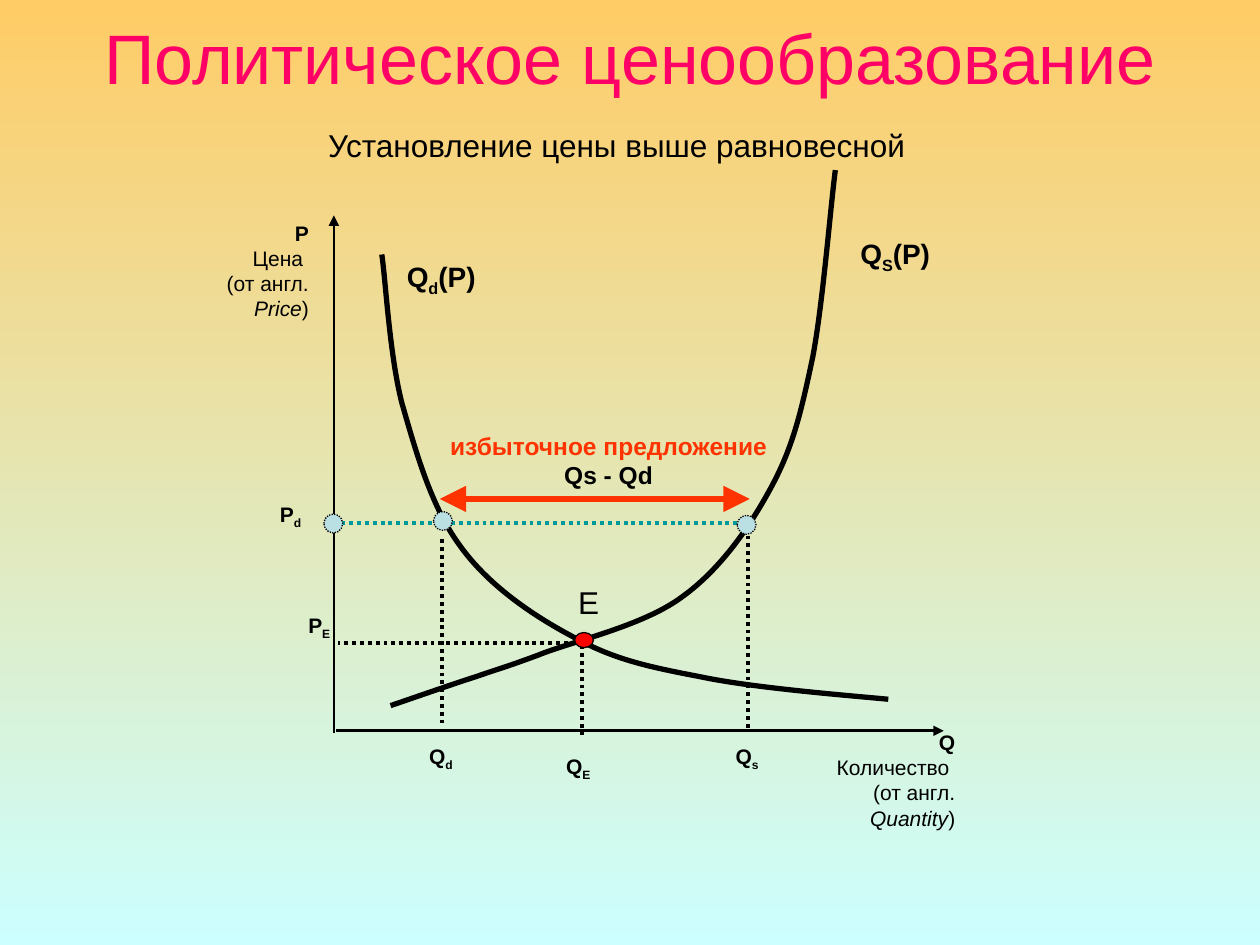
from lxml import etree
from pptx import Presentation
from pptx.dml.color import RGBColor
from pptx.enum.dml import MSO_LINE
from pptx.enum.shapes import MSO_CONNECTOR, MSO_SHAPE
from pptx.enum.text import MSO_ANCHOR, PP_ALIGN
from pptx.oxml.ns import qn
from pptx.util import Inches, Pt

LEFT, CENTER, RIGHT = PP_ALIGN.LEFT, PP_ALIGN.CENTER, PP_ALIGN.RIGHT
TOP, MIDDLE = MSO_ANCHOR.TOP, MSO_ANCHOR.MIDDLE
OVAL = MSO_SHAPE.OVAL
STRAIGHT = MSO_CONNECTOR.STRAIGHT
DOTTED = MSO_LINE.ROUND_DOT  # written to the file as sysDot

FONT = "Arial"
COLORS = {
    "sky": "FFCC66",
    "ground": "CCFFFF",
    "title": "FF0066",
    "ink": "000000",
    "surplus": "FF3300",
    "price_level": "009999",
    "point": "BBE0E3",
    "equilibrium": "FF0000",
}

# Start point, then three points (two controls and an end) for each Bezier segment
DEMAND_CURVE = [
    (2.03, 1.02),
    (2.06, 1.21), (2.09, 1.81), (2.19, 2.2),
    (2.3, 2.58), (2.42, 3.02), (2.65, 3.33),
    (2.87, 3.64), (3.22, 3.88), (3.54, 4.05),
    (3.86, 4.23), (4.13, 4.29), (4.55, 4.37),
    (4.97, 4.46), (5.73, 4.52), (6.05, 4.55),
]
SUPPLY_CURVE = [
    (2.1, 4.6),
    (2.22, 4.56), (2.59, 4.43), (2.78, 4.37),
    (2.98, 4.3), (3, 4.3), (3.27, 4.2),
    (3.54, 4.09), (4.1, 3.97), (4.41, 3.74),
    (4.72, 3.52), (4.96, 3.17), (5.13, 2.85),
    (5.3, 2.53), (5.36, 2.26), (5.45, 1.84),
    (5.53, 1.42), (5.59, 0.66), (5.63, 0.35),
]


def color(name):
    return RGBColor.from_string(COLORS[name])


def style_line(line, color_name, width, dash=None):
    line.color.rgb = color(color_name)
    line.width = Pt(width)
    if dash is not None:
        line.dash_style = dash


def add_text(slide, box, paragraphs, size, align=LEFT, bold=False,
             color_name="ink", anchor=TOP):
    """Each paragraph is a list of (text, style), style being "", "sub", "bold" or "italic"."""
    frame = slide.shapes.add_textbox(*map(Inches, box)).text_frame
    frame.word_wrap = True
    frame.vertical_anchor = anchor
    for index, runs in enumerate(paragraphs):
        paragraph = frame.paragraphs[0] if index == 0 else frame.add_paragraph()
        paragraph.alignment = align
        font = paragraph.font
        font.name, font.size, font.bold = FONT, Pt(size), bold
        font.color.rgb = color(color_name)
        for text, style in runs:
            run = paragraph.add_run()
            run.text = text
            if style == "sub":
                run._r.get_or_add_rPr().set("baseline", "-25000")
            elif style == "bold":
                run.font.bold = True
            elif style == "italic":
                run.font.italic = True
    return frame


def add_line(slide, start, end, color_name="ink", width=2.25, dash=None,
             arrows=(), arrow_size="med"):
    """arrows holds "headEnd" and/or "tailEnd", in that order."""
    connector = slide.shapes.add_connector(STRAIGHT, *map(Inches, (*start, *end)))
    style_line(connector.line, color_name, width, dash)
    for arrow in arrows:
        etree.SubElement(connector.get_or_add_ln(), qn(f"a:{arrow}"),
                         type="triangle", w=arrow_size, len=arrow_size)
    etree.SubElement(connector._element.spPr, qn("a:effectLst"))


def add_curve(slide, points):
    """Draw the points as a polyline, then regroup its segments by three into Beziers."""
    start, *others = [(Inches(x), Inches(y)) for x, y in points]
    builder = slide.shapes.build_freeform(*start)
    builder.add_line_segments(others, close=False)
    shape = builder.convert_to_shape()
    segments = list(shape._element.iter(qn("a:lnTo")))
    for first in range(0, len(segments), 3):
        bezier = etree.Element(qn("a:cubicBezTo"))
        segments[first].addprevious(bezier)
        for segment in segments[first:first + 3]:
            bezier.append(segment[0])
            segment.getparent().remove(segment)
    shape.shadow.inherit = False
    shape.fill.background()
    style_line(shape.line, "ink", 3)


def add_point(slide, box, color_name, dash=None):
    shape = slide.shapes.add_shape(OVAL, *map(Inches, box))
    shape.shadow.inherit = False
    shape.fill.solid()
    shape.fill.fore_color.rgb = color(color_name)
    style_line(shape.line, "ink", 0.75, dash)


def paint_background(slide):
    fill = slide.background.fill
    fill.gradient()
    fill.gradient_angle = 270
    for stop, name, position in zip(fill.gradient_stops, ("sky", "ground"), (0, 1)):
        stop.color.rgb = color(name)
        stop.position = position


def add_headings(slide, left, top):
    add_text(slide, (left, top, 9, 0.52), [[("Политическое ценообразование", "")]],
             40, CENTER, color_name="title", anchor=MIDDLE)
    add_text(slide, (left + 0.27, top + 0.76, 8.25, 0.4),
             [[("Установление цены выше равновесной", "")]], 18, CENTER)


def add_market_diagram(slide, left, top):
    def at(x, y, *size):
        return (left + x, top + y, *size)

    # Dotted projections of the equilibrium and of the two quantities
    for start, end in (
        ((3.63, 4.1), (1.68, 4.1)),
        ((3.62, 4.06), (3.62, 4.83)),
        ((2.51, 3.28), (2.51, 4.75)),
        ((4.94, 3.25), (4.94, 4.8)),
    ):
        add_line(slide, at(*start), at(*end), dash=DOTTED)

    for start, end in (((1.65, 4.82), (1.65, 0.71)), ((1.67, 4.8), (6.49, 4.8))):
        add_line(slide, at(*start), at(*end), width=1.5, arrows=("tailEnd",))

    for curve in (DEMAND_CURVE, SUPPLY_CURVE):
        add_curve(slide, [at(*point) for point in curve])

    add_point(slide, at(3.56, 4.02, 0.15, 0.12), "equilibrium")
    add_line(slide, at(1.71, 3.15), at(4.95, 3.15), "price_level", dash=DOTTED)
    for x, y in ((1.57, 3.08), (2.44, 3.06), (4.85, 3.09)):
        add_point(slide, at(x, y, 0.15, 0.15), "point", DOTTED)
    add_line(slide, at(2.49, 2.96), at(4.95, 2.96), "surplus", 3,
             arrows=("headEnd", "tailEnd"), arrow_size="lg")

    for box, symbol, name, english in (
        ((0.53, 0.7, 1.02, 1.17), "P", "Цена ", "Price"),
        ((5.07, 4.74, 1.61, 1.02), "Q", "Количество ", "Quantity"),
    ):
        add_text(slide, at(*box), [
            [(symbol, "bold")],
            [(name, "")],
            [("(от англ.", "")],
            [(english, "italic"), (")", "")],
        ], 12, RIGHT)

    for box, symbol, index, align in (
        ((3.34, 4.93, 0.5, 0.31), "Q", "E", CENTER),
        ((2.25, 4.85, 0.5, 0.31), "Q", "d", CENTER),
        ((4.68, 4.85, 0.5, 0.31), "Q", "s", CENTER),
        ((1.24, 3.81, 0.48, 0.36), "P", "E", RIGHT),
        ((1.01, 2.93, 0.48, 0.36), "P", "d", RIGHT),
    ):
        add_text(slide, at(*box), [[(symbol, ""), (index, "sub")]], 12, align, True)

    for box, index in (((2.13, 1.01, 0.89, 0.37), "d"), ((5.73, 0.83, 0.83, 0.38), "S")):
        add_text(slide, at(*box), [[("Q", ""), (index, "sub"), ("(P)", "")]], 16, bold=True)

    add_text(slide, at(3.49, 3.58, 0.48, 0.4), [[("E", "")]], 18)
    surplus = add_text(slide, at(2.44, 2.37, 2.78, 0.57),
                       [[("избыточное предложение", "")], [("Qs - Qd", "")]],
                       14, CENTER, True, "surplus")
    surplus.paragraphs[1].font.color.rgb = color("ink")


def main():
    presentation = Presentation()
    presentation.slide_width, presentation.slide_height = Inches(10), Inches(7.5)
    slide = presentation.slides.add_slide(presentation.slide_layouts[6])
    paint_background(slide)
    add_headings(slide, 0.5, 0.19)
    add_market_diagram(slide, 1, 1)
    presentation.save("out.pptx")


if __name__ == "__main__":
    main()
